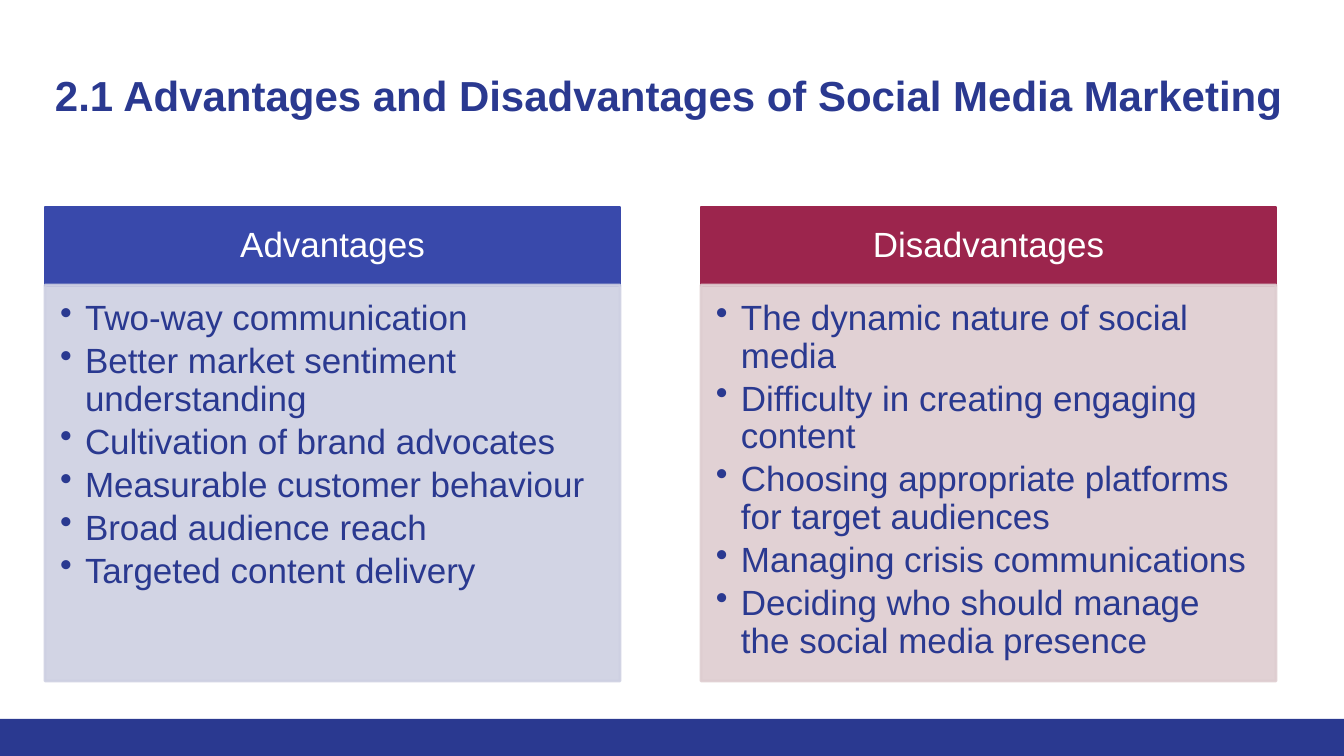
from dataclasses import dataclass

from pptx import Presentation
from pptx.dml.color import RGBColor
from pptx.enum.shapes import MSO_SHAPE
from pptx.enum.text import MSO_ANCHOR, PP_ALIGN
from pptx.oxml.ns import qn
from pptx.util import Pt
from lxml import etree

RECTANGLE = MSO_SHAPE.RECTANGLE
TOP, MIDDLE = MSO_ANCHOR.TOP, MSO_ANCHOR.MIDDLE
LEFT, CENTER = PP_ALIGN.LEFT, PP_ALIGN.CENTER
EMU_PER_PX = 914400 / 100.8


def px(length):
    return round(length * EMU_PER_PX)


@dataclass(frozen=True)
class Theme:
    font: str = "Arial"
    navy: str = "2A3990"
    white: str = "FFFFFF"
    indigo: str = "3949AB"
    pale_indigo: str = "CED0E2"
    crimson: str = "9C254D"
    pale_crimson: str = "DECDD0"
    title_size: int = 30
    text_size: int = 25
    border: int = 2
    panel_opacity: int = 90
    line_spacing: float = 0.9
    item_gap: float = 3.75
    bullet_indent: int = 25


class SlideBuilder:
    def __init__(self, slide, theme):
        self.slide = slide
        self.theme = theme

    def box(self, left, top, width, height, color, border=0, opacity=100):
        rect = self.slide.shapes.add_shape(
            RECTANGLE, px(left), px(top), px(width), px(height))
        rect.shadow.inherit = False
        rect.fill.solid()
        rect.fill.fore_color.rgb = RGBColor.from_string(color)
        if border:
            rect.line.color.rgb = RGBColor.from_string(color)
            rect.line.width = Pt(border)
        else:
            rect.line.fill.background()
        if opacity < 100:
            for paint in rect._element.spPr.iter(qn("a:srgbClr")):
                etree.SubElement(paint, qn("a:alpha"), val=str(opacity * 1000))
        return rect

    def frame(self, shape, insets, anchor):
        frame = shape.text_frame
        frame.word_wrap = True
        frame.vertical_anchor = anchor
        (frame.margin_left, frame.margin_top,
         frame.margin_right, frame.margin_bottom) = map(px, insets)
        return frame

    def add_text(self, paragraph, text, size, color, align=LEFT, bold=False):
        paragraph.alignment = align
        run = paragraph.add_run()
        run.text = text
        run.font.name = self.theme.font
        run.font.size = Pt(size)
        run.font.bold = bold
        run.font.color.rgb = RGBColor.from_string(color)

    def title(self, left, top, width, height, text):
        heading = self.slide.shapes.add_textbox(
            px(left), px(top), px(width), px(height))
        frame = self.frame(heading, (10, 10, 10, 10), TOP)
        self.add_text(frame.paragraphs[0], text, self.theme.title_size,
                      self.theme.navy, bold=True)

    def header(self, left, top, width, height, text, color):
        band = self.box(left, top, width, height, color, self.theme.border)
        frame = self.frame(band, (19, 11, 19, 11), MIDDLE)
        label = frame.paragraphs[0]
        label.line_spacing = self.theme.line_spacing
        self.add_text(label, text, self.theme.text_size, self.theme.white,
                      CENTER)

    def bullets(self, left, top, width, height, items, color):
        theme = self.theme
        panel = self.box(left, top, width, height, color, theme.border,
                         theme.panel_opacity)
        frame = self.frame(panel, (15, 15, 19, 22), TOP)
        for index, item in enumerate(items):
            point = frame.add_paragraph() if index else frame.paragraphs[0]
            self.add_text(point, item, theme.text_size, theme.navy)
            point.line_spacing = theme.line_spacing
            point.space_after = Pt(theme.item_gap)
            properties = point._p.get_or_add_pPr()
            properties.set("marL", str(px(theme.bullet_indent)))
            properties.set("indent", str(-px(theme.bullet_indent)))
            etree.SubElement(properties, qn("a:buChar"), char="•")


def main():
    theme = Theme()
    deck = Presentation()
    deck.slide_width, deck.slide_height = px(1344), px(756)
    builder = SlideBuilder(deck.slides.add_slide(deck.slide_layouts[6]), theme)

    # Footer band and title
    builder.box(0, 719, 1344, 37, theme.navy)
    builder.title(45, 60, 1252, 90,
                  "2.1 Advantages and Disadvantages of Social Media Marketing")

    # Two comparison columns
    columns = [
        ("Advantages", theme.indigo, theme.pale_indigo, [
            "Two-way communication",
            "Better market sentiment understanding",
            "Cultivation of brand advocates",
            "Measurable customer behaviour",
            "Broad audience reach",
            "Targeted content delivery",
        ]),
        ("Disadvantages", theme.crimson, theme.pale_crimson, [
            "The dynamic nature of social media",
            "Difficulty in creating engaging content",
            "Choosing appropriate platforms for target audiences",
            "Managing crisis communications",
            "Deciding who should manage the social media presence",
        ]),
    ]
    first_left, column_step, column_width = 45, 656, 575
    for index, (heading, strong, pale, items) in enumerate(columns):
        left = first_left + index * column_step
        builder.header(left, 207, column_width, 79, heading, strong)
        builder.bullets(left, 285, column_width, 396, items, pale)

    deck.save("out.pptx")


if __name__ == "__main__":
    main()
